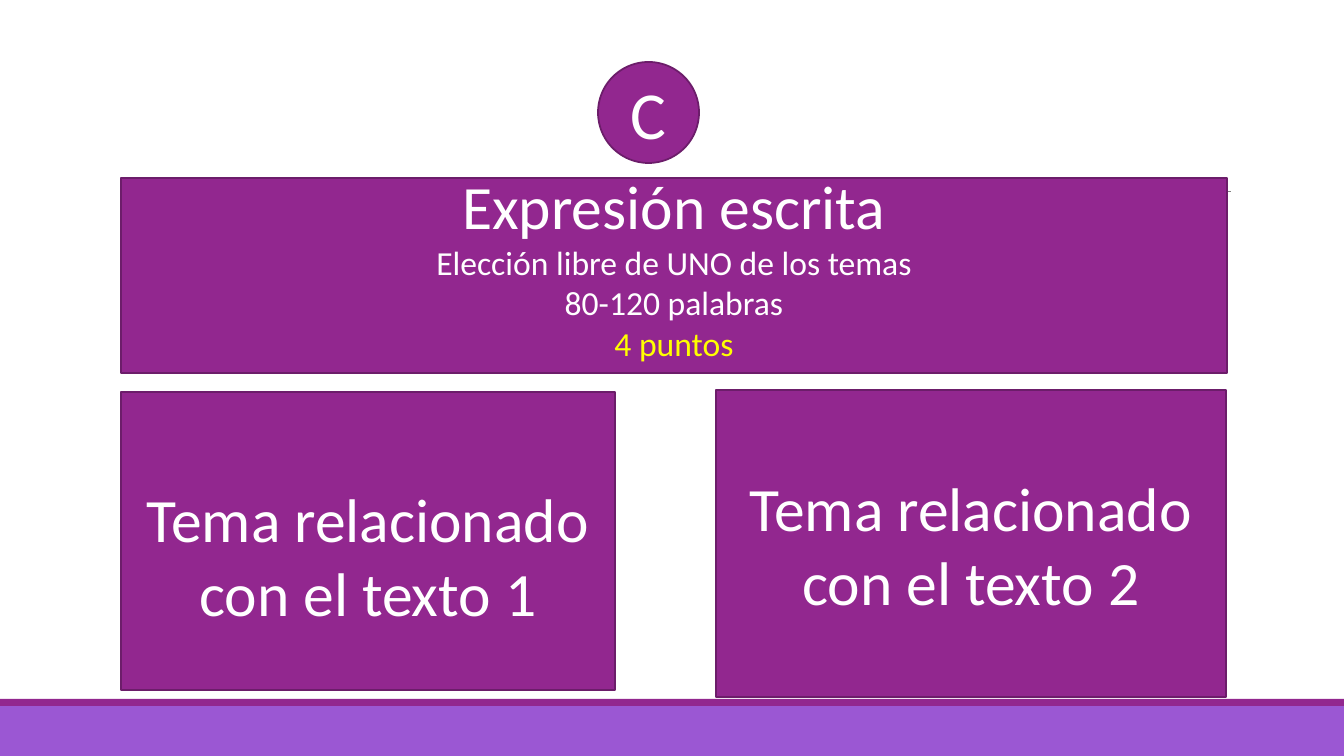
from dataclasses import dataclass

from lxml import etree
from pptx import Presentation
from pptx.dml.color import RGBColor
from pptx.enum.shapes import MSO_CONNECTOR, MSO_SHAPE
from pptx.enum.text import MSO_ANCHOR, MSO_AUTO_SIZE, PP_ALIGN
from pptx.oxml.ns import qn
from pptx.shapes.autoshape import Shape
from pptx.slide import Slide
from pptx.util import Emu, Pt

PX_PER_INCH = 100.8
WIDTH, HEIGHT = 1344, 756

PURPLE = RGBColor(0x92, 0x27, 0x8F)
DARK_PURPLE = RGBColor(0x6C, 0x1D, 0x6A)
LILAC = RGBColor(0x9B, 0x57, 0xD3)
GRAY = RGBColor(0x80, 0x80, 0x80)
WHITE = RGBColor(0xFF, 0xFF, 0xFF)
YELLOW = RGBColor(0xFF, 0xFF, 0x00)
FONT = "Calibri"


@dataclass(frozen=True)
class Band:
    top: int
    height: int
    color: RGBColor


@dataclass(frozen=True)
class Line:
    text: str
    size: int
    color: RGBColor = WHITE


@dataclass(frozen=True)
class Box:
    left: int
    top: int
    width: int
    height: int
    lines: tuple[Line, ...]
    kind: MSO_SHAPE = MSO_SHAPE.RECTANGLE
    inset_top: int = 5
    inset_bottom: int = 5
    is_title: bool = False


BANDS = (Band(706, 50, LILAC), Band(699, 7, PURPLE))

BOXES = (
    Box(598, 62, 101, 101, (Line("C", 48),), MSO_SHAPE.OVAL),
    Box(121, 178, 1106, 195, (
        Line("Expresión escrita", 44),
        Line("Elección libre de UNO de los temas", 24),
        Line("80-120 palabras", 24),
        Line("4 puntos", 24, YELLOW),
    ), inset_top=0, inset_bottom=20, is_title=True),
    Box(121, 392, 494, 298, (Line("Tema relacionado con el texto 1", 44),),
        inset_top=32),
    Box(716, 390, 510, 307, (Line("Tema relacionado con el texto 2", 44),)),
)


def px(n: int) -> Emu:
    return Emu(round(n * 914400 / PX_PER_INCH))


def draw_band(s: Slide, band: Band) -> None:
    sp = s.shapes.add_shape(MSO_SHAPE.RECTANGLE, 0, px(band.top),
                            px(WIDTH), px(band.height))
    sp.shadow.inherit = False
    sp.fill.solid()
    sp.fill.fore_color.rgb = band.color
    sp.line.fill.background()


def draw_rule(s: Slide, left: int, right: int, y: int) -> None:
    rule = s.shapes.add_connector(MSO_CONNECTOR.STRAIGHT,
                                  px(left), px(y), px(right), px(y))
    rule.line.color.rgb = GRAY
    rule.line.width = Pt(0.5)
    etree.SubElement(rule.element.spPr, qn("a:effectLst"))


def write_lines(sp: Shape, box: Box) -> None:
    tf = sp.text_frame
    tf.word_wrap = True
    tf.auto_size = MSO_AUTO_SIZE.NONE
    tf.vertical_anchor = MSO_ANCHOR.MIDDLE
    tf.margin_top, tf.margin_bottom = px(box.inset_top), px(box.inset_bottom)
    for i, line in enumerate(box.lines):
        p = tf.add_paragraph() if i else tf.paragraphs[0]
        p.alignment = PP_ALIGN.CENTER
        r = p.add_run()
        r.text = line.text
        r.font.name = FONT
        r.font.size = Pt(line.size)
        r.font.color.rgb = line.color


def draw_box(s: Slide, box: Box) -> None:
    frame = [px(n) for n in (box.left, box.top, box.width, box.height)]
    if box.is_title:
        sp = s.shapes.title
        sp.left, sp.top, sp.width, sp.height = frame
        # Bring the title in front of the rule
        sp.element.getparent().append(sp.element)
    else:
        sp = s.shapes.add_shape(box.kind, *frame)
        sp.shadow.inherit = False
    sp.fill.solid()
    sp.fill.fore_color.rgb = PURPLE
    sp.line.color.rgb = DARK_PURPLE
    sp.line.width = Pt(1.25)
    write_lines(sp, box)


def main() -> None:
    prs = Presentation()
    prs.slide_width, prs.slide_height = px(WIDTH), px(HEIGHT)
    s = prs.slides.add_slide(prs.slide_layouts.get_by_name("Title Only"))

    # Footer bands and rule
    for band in BANDS:
        draw_band(s, band)
    draw_rule(s, 132, 1231, 191)

    # Section letter, heading and the two topics
    for box in BOXES:
        draw_box(s, box)

    prs.save("out.pptx")


if __name__ == "__main__":
    main()
